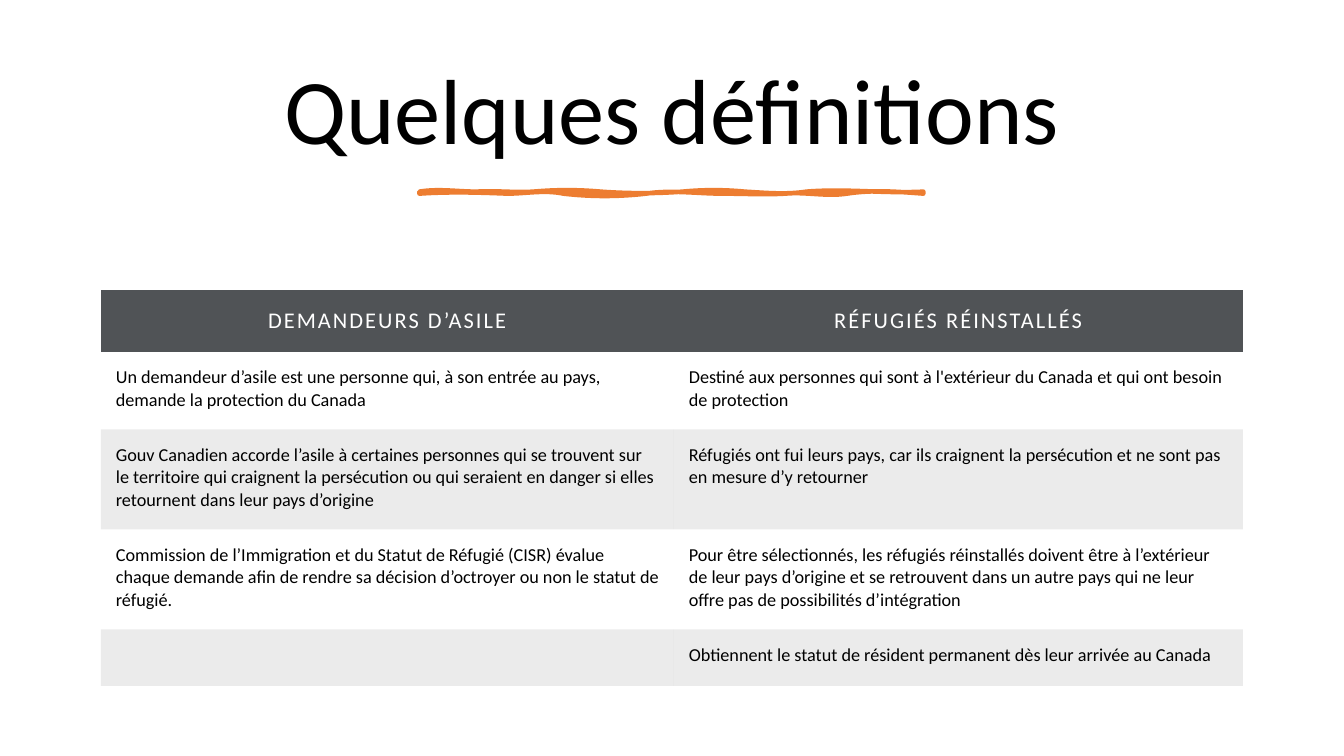
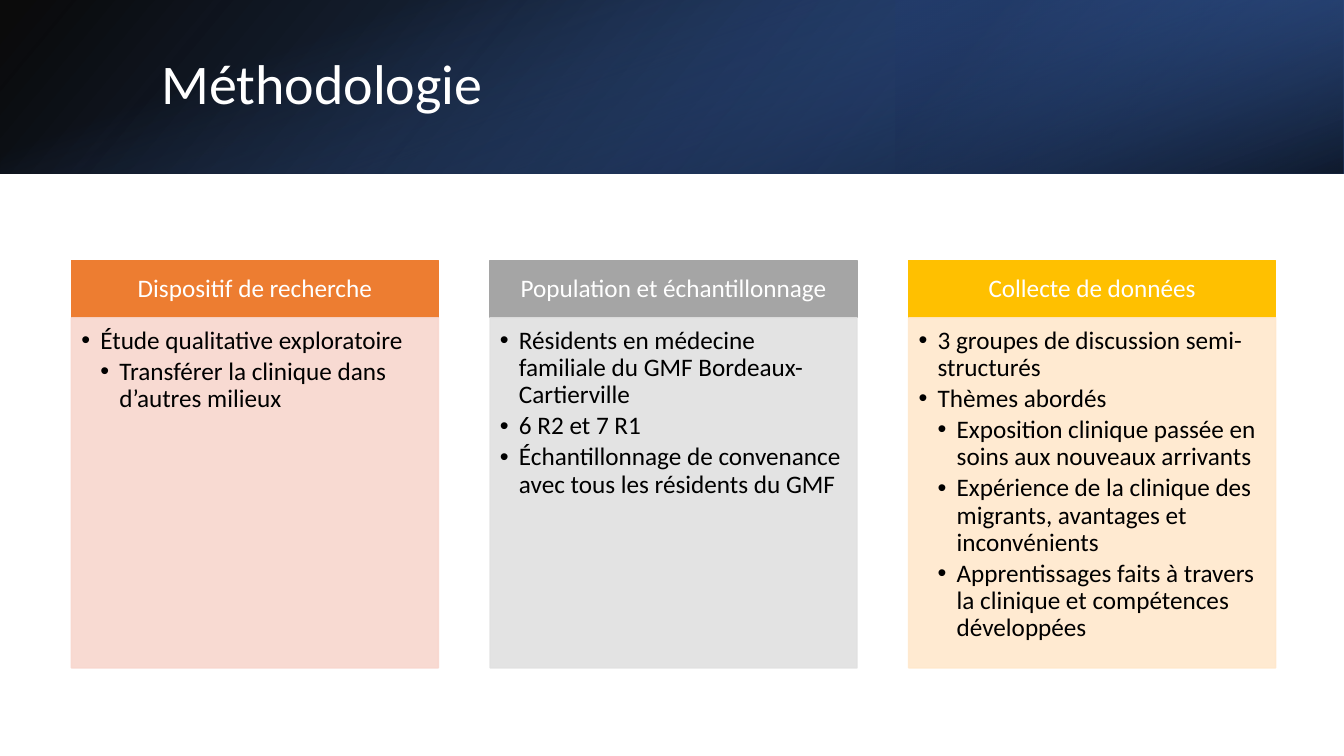
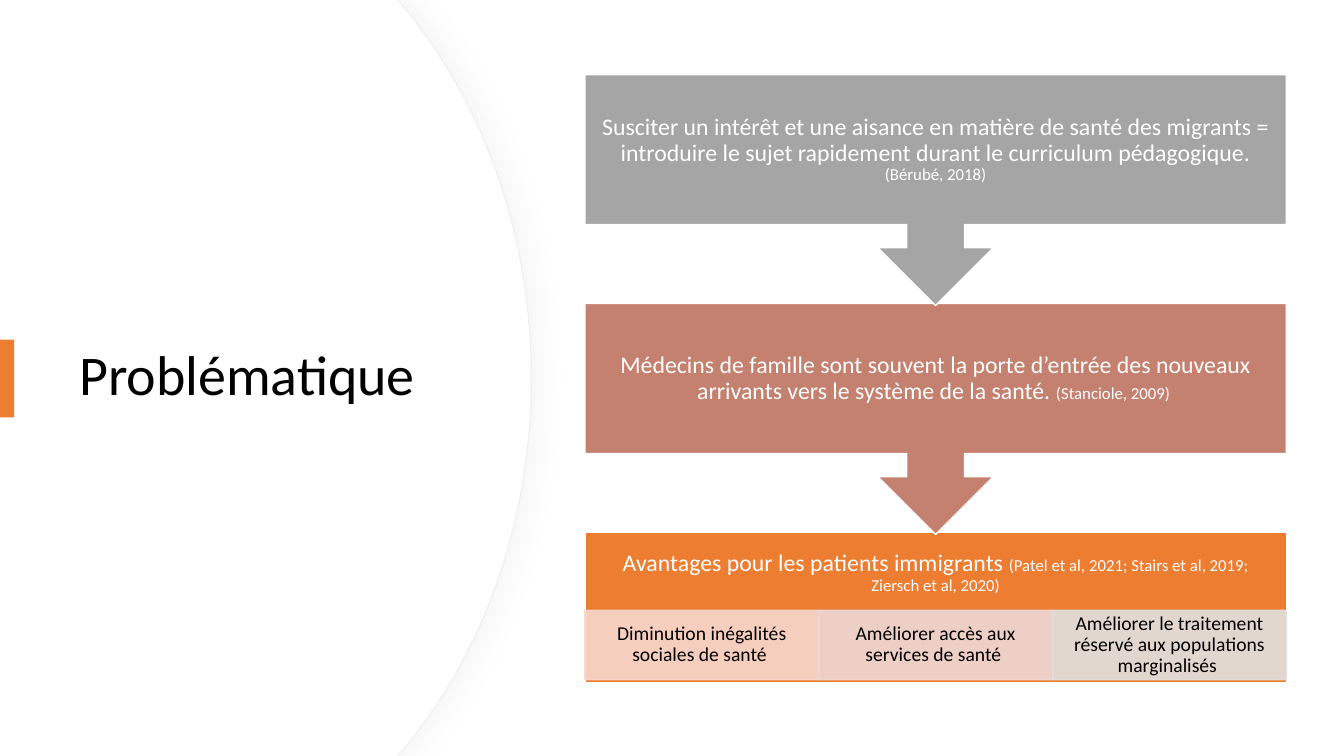
from dataclasses import dataclass

from lxml import etree
from pptx import Presentation
from pptx.dml.color import RGBColor
from pptx.enum.shapes import MSO_SHAPE
from pptx.enum.text import MSO_ANCHOR, MSO_AUTO_SIZE, PP_ALIGN
from pptx.oxml import parse_xml
from pptx.oxml.ns import nsdecls, qn
from pptx.util import Cm, Pt

LEFT, CENTER = PP_ALIGN.LEFT, PP_ALIGN.CENTER
TOP, MIDDLE = MSO_ANCHOR.TOP, MSO_ANCHOR.MIDDLE
RECT, CALLOUT = MSO_SHAPE.RECTANGLE, MSO_SHAPE.DOWN_ARROW_CALLOUT
FIXED = MSO_AUTO_SIZE.NONE
NO_GRID = "{2D5ABB26-0587-4C30-8999-92F81FD0307C}"


@dataclass(frozen=True)
class Theme:
    font: str = "Calibri"
    mark: str = "Arial"
    black: str = "000000"
    white: str = "FFFFFF"
    orange: str = "ED7D31"
    gray: str = "A5A5A5"
    gold: str = "FFC000"
    clay: str = "C48170"
    slate: str = "505356"
    peach: str = "F8D7CE"
    rose: str = "EDD9D7"
    silver: str = "E1E1E1"
    cream: str = "FFE8CC"
    edge: str = "EFEFEF"
    shade: str = "D9D9D9"
    navy: str = "203864"
    royal: str = "2F5597"
    blue: str = "4472C4"
    hero: int = 66
    title: int = 40
    body: int = 18
    step: int = 17
    head: int = 16
    item: int = 14
    cell: int = 13
    cite: int = 12


T = Theme()


def write(frame, text, host=None, size=T.body, color=T.black, align=LEFT,
          anchor=TOP, lead=0.9, after=0, inset=None, track=0, cite="",
          bullet=False):
    host = host or frame
    host.vertical_anchor = anchor
    frame.word_wrap = True
    if inset:
        (host.margin_left, host.margin_top,
         host.margin_right, host.margin_bottom) = map(Cm, inset)
    lines = [(0, text)] if isinstance(text, str) else text
    for num, (level, line) in enumerate(lines):
        para = frame.add_paragraph() if num else frame.paragraphs[0]
        para.alignment = align
        para.line_spacing = lead
        para.space_before, para.space_after = Pt(0), Pt(after)
        if bullet:
            para.level = level
            props = para._p.get_or_add_pPr()
            props.set("marL", str(Cm(0.48 * (level + 1))))
            props.set("indent", str(-Cm(0.48)))
            etree.SubElement(props, qn("a:buFont")).set("typeface", T.mark)
            etree.SubElement(props, qn("a:buChar")).set("char", "•")
        for part, points in ((line, size), (cite, T.cite)):
            if part:
                run = para.add_run()
                run.text = part
                font = run.font
                font.name, font.size = T.font, Pt(points)
                font.color.rgb = RGBColor.from_string(color)
                if track:
                    font._element.set("spc", str(track))


def paint(fill, color, alpha=100):
    if color is None:
        fill.background()
        return
    fill.solid()
    fill.fore_color.rgb = RGBColor.from_string(color)
    if alpha < 100:
        tone = fill._xPr.find(qn("a:solidFill"))[0]
        etree.SubElement(tone, qn("a:alpha")).set("val", str(alpha * 1000))


class Deck:
    def __init__(self):
        self.file = Presentation()
        self.file.slide_width, self.file.slide_height = Cm(33.87), Cm(19.05)

    def page(self):
        self.slide = self.file.slides.add_slide(self.file.slide_layouts[5])
        self.shapes = self.slide.shapes

    def title(self, text, place, **form):
        head = self.shapes.title
        head.left, head.top, head.width, head.height = map(Cm, place)
        head.text_frame.auto_size = FIXED
        form = {"size": T.title, "anchor": MIDDLE, **form}
        write(head.text_frame, text, **form)
        self.shapes._spTree.append(head._element)

    def style(self, shape, fill, line=None, width=1.0, alpha=100):
        shape.shadow.inherit = False
        paint(shape.fill, fill, alpha)
        paint(shape.line.fill, line, alpha)
        if line:
            shape.line.width = Pt(width)
        return shape

    def box(self, place, fill, line=None, kind=RECT, alpha=100, text="",
            **form):
        shape = self.shapes.add_shape(kind, *map(Cm, place))
        self.style(shape, fill, line, alpha=alpha)
        if text:
            write(shape.text_frame, text, **form)
        return shape

    def blend(self, place, stops, angle, turn=0, flip=False):
        shape = self.box(place, T.white)
        shape.rotation = turn
        props = shape._element.spPr
        if flip:
            props.xfrm.set("flipH", "1")
        marks = "".join(
            f'<a:gs pos="{pos * 1000}"><a:srgbClr val="{color}">'
            f'<a:alpha val="{alpha * 1000}"/></a:srgbClr></a:gs>'
            for pos, color, alpha in stops)
        props.replace(props.find(qn("a:solidFill")), parse_xml(
            f'<a:gradFill {nsdecls("a")} rotWithShape="1"><a:gsLst>{marks}'
            f'</a:gsLst><a:lin ang="{angle * 60000}" scaled="0"/>'
            '</a:gradFill>'))

    def outline(self, start, legs, fill, line=None, width=1.0):
        build = self.shapes.build_freeform(*map(Cm, start))
        build.add_line_segments(
            [(Cm(x), Cm(y)) for leg in legs
             for x, y in zip(leg[::2], leg[1::2])])
        shape = build.convert_to_shape()
        trail = shape._element.find(".//" + qn("a:path"))
        lines = iter(trail.findall(qn("a:lnTo")))
        for leg in legs:
            first = next(lines)
            if len(leg) == 6:
                bend = etree.Element(qn("a:cubicBezTo"))
                trail.replace(first, bend)
                bend.append(first[0])
                for _ in range(2):
                    spare = next(lines)
                    bend.append(spare[0])
                    trail.remove(spare)
        return self.style(shape, fill, line, width)

    def glow(self, shape, color, alpha, blur, gap):
        shape._element.spPr.find(qn("a:effectLst")).append(parse_xml(
            f'<a:outerShdw {nsdecls("a")} blurRad="{Pt(blur)}" '
            f'dist="{Pt(gap)}" dir="0" algn="l" rotWithShape="0">'
            f'<a:srgbClr val="{color}"><a:alpha val="{alpha * 1000}"/>'
            '</a:srgbClr></a:outerShdw>'))

    def table(self, place, cols, rows, data):
        grid = self.shapes.add_table(len(rows), len(cols),
                                     *map(Cm, place)).table
        grid._tbl.tblPr.find(qn("a:tableStyleId")).text = NO_GRID
        grid.horz_banding = False
        for col, width in zip(grid.columns, cols):
            col.width = Cm(width)
        for num, (row, high) in enumerate(zip(grid.rows, rows)):
            row.height = Cm(high)
            if num == 0:
                form = dict(size=T.head, color=T.white, align=CENTER,
                            anchor=MIDDLE, track=150)
                tone = (T.slate,)
            else:
                form = dict(size=T.cell)
                tone = (None,) if num % 2 else (T.black, 8)
            for cell, text in zip(row.cells, data[num]):
                paint(cell.fill, *tone)
                if text:
                    write(cell.text_frame, text, host=cell, lead=1.0,
                          inset=(0.38,) * 4, **form)


def wave():
    over = [(12.01, -0.08, 0), (13.44, -0.03, 0.03), (15.14, -0.05, -0.05),
            (17.2, 0.05, 0.05), (18.77, -0.05, -0.05), (20.32, 0.03, 0.08),
            (23.27, -0.08, 0.05)]
    under = [(21.34, -0.05, -0.1), (19.79, 0.08, -0.05), (18.21, 0.03, 0),
             (16.28, 0, -0.1), (14.2, 0.08, 0.08), (12.78, -0.1, 0),
             (10.57, -0.03, -0.05)]
    legs, x = [], 10.57
    for base, nodes in ((4.83, over), (4.88, under)):
        if legs:
            legs.append((x, base))
        for end, rise, fall in nodes:
            third = (end - x) / 3
            legs.append((x + third, base + rise, end - third, base + fall,
                         end, base))
            x = end
    return legs


def terms(deck):
    deck.page()
    deck.title("Quelques définitions", (1.78, 1.15, 30.3, 3.48),
               size=T.hero, align=CENTER)
    deck.outline((10.57, 4.83), wave(), T.orange, T.orange, 3.25)
    deck.table((2.54, 7.31, 28.78, 9.95), (14.44, 14.34),
               (1.55, 1.96, 2.52, 2.52, 1.42), [
        ("DEMANDEURS D’ASILE", "RÉFUGIÉS RÉINSTALLÉS"),
        ("Un demandeur d’asile est une personne qui, à son entrée au pays, "
         "demande la protection du Canada",
         "Destiné aux personnes qui sont à l'extérieur du Canada et qui ont "
         "besoin de protection"),
        ("Gouv Canadien accorde l’asile à certaines personnes qui se "
         "trouvent sur le territoire qui craignent la persécution ou qui "
         "seraient en danger si elles retournent dans leur pays d’origine",
         "Réfugiés ont fui leurs pays, car ils craignent la persécution et "
         "ne sont pas en mesure d’y retourner"),
        ("Commission de l’Immigration et du Statut de Réfugié (CISR) évalue "
         "chaque demande afin de rendre sa décision d’octroyer ou non le "
         "statut de réfugié.",
         "Pour être sélectionnés, les réfugiés réinstallés doivent être à "
         "l’extérieur de leur pays d’origine et se retrouvent dans un autre "
         "pays qui ne leur offre pas de possibilités d’intégration"),
        ("", "Obtiennent le statut de résident permanent dès leur arrivée "
             "au Canada")])


def method(deck):
    deck.page()
    deck.blend((0, 0, 33.87, 4.37),
               [(0, T.black, 96), (100, T.royal, 100)], 140, flip=True)
    deck.blend((22.58, 0, 11.29, 4.37),
               [(19, T.navy, 68), (100, T.blue, 79)], 320, 180, True)
    deck.blend((14.75, -14.75, 4.37, 33.87),
               [(23, T.blue, 0), (99, T.black, 74)], 340, 90)
    deck.title("Méthodologie", (3.81, 0.95, 27.89, 2.44), color=T.white)
    cards = [
        ("Dispositif de recherche", T.orange, T.peach, [
            (0, "Étude qualitative exploratoire"),
            (1, "Transférer la clinique dans d’autres milieux")]),
        ("Population et échantillonnage", T.gray, T.silver, [
            (0, "Résidents en médecine familiale du GMF "
                "Bordeaux-Cartierville"),
            (0, "6 R2 et 7 R1"),
            (0, "Échantillonnage de convenance avec tous les résidents "
                "du GMF")]),
        ("Collecte de données", T.gold, T.cream, [
            (0, "3 groupes de discussion semi-structurés"),
            (0, "Thèmes abordés"),
            (1, "Exposition clinique passée en soins aux nouveaux arrivants"),
            (1, "Expérience de la clinique des migrants, avantages et "
                "inconvénients"),
            (1, "Apprentissages faits à travers la clinique et compétences "
                "développées")])]
    for num, (head, dark, pale, lines) in enumerate(cards):
        x = 1.8 + 10.55 * num
        deck.box((x, 6.57, 9.25, 1.44), dark, dark, text=head, color=T.white,
                 align=CENTER, anchor=MIDDLE, inset=(0.36, 0.2, 0.36, 0.2))
        deck.box((x, 8.01, 9.25, 8.82), pale, pale, alpha=90, text=lines,
                 after=2.7, bullet=True, inset=(0.25, 0.25, 0.36, 0.41))


def issue(deck):
    deck.page()
    legs = [(10.01, 0), (10.19, 0.2),
            (12.17, 2.59, 13.39, 5.89, 13.39, 9.53),
            (13.39, 13.16, 12.17, 16.46, 10.19, 18.85),
            (10.01, 19.05), (0, 19.05)]
    disc = deck.outline((0, 0), legs, T.white, T.edge, 0.75)
    deck.glow(disc, T.shade, 30, 20, 3)
    deck.outline((0, 0), legs, T.white).width = Cm(13.36)
    deck.title("Problématique", (1.74, 3.23, 10.01, 12.57))
    deck.box((0, 8.56, 0.36, 1.96), T.orange)

    x, y, wide, pitch = 14.74, 13.42, 17.68, 5.77
    form = dict(size=T.step, color=T.white, align=CENTER, anchor=MIDDLE)
    deck.box((x, y, wide, 3.79), T.orange, T.white,
             text="Avantages pour les patients immigrants ",
             cite="(Patel et al, 2021; Stairs et al, 2019; "
                  "Ziersch et al, 2020)",
             inset=(0.33, 0.33, 0.33, 2.09), **form)
    gains = [("Diminution inégalités sociales de santé ", T.peach),
             ("Améliorer accès aux services de santé ", T.rose),
             ("Améliorer le traitement réservé aux populations marginalisés ",
              T.silver)]
    part = wide / len(gains)
    for num, (text, pale) in enumerate(gains):
        deck.box((x + part * num, 15.38, part, 1.75), pale, pale, alpha=90,
                 text=text, size=T.item, align=CENTER, anchor=MIDDLE,
                 inset=(0.28, 0.05, 0.28, 0.05))
    steps = [("Médecins de famille sont souvent la porte d’entrée des "
              "nouveaux arrivants vers le système de la santé. ",
              "(Stanciole, 2009) ", T.clay),
             ("Susciter un intérêt et une aisance en matière de santé des "
              "migrants = introduire le sujet rapidement durant le "
              "curriculum pédagogique. ", "(Bérubé, 2018)", T.gray)]
    for num, (text, cite, tone) in enumerate(steps, 1):
        deck.box((x, y - pitch * num, wide, 5.82), tone, T.white, CALLOUT,
                 text=text, cite=cite, inset=(0.33,) * 4, **form)


def main():
    deck = Deck()
    for draw in (terms, method, issue):
        draw(deck)
    deck.file.save("out.pptx")


if __name__ == "__main__":
    main()
